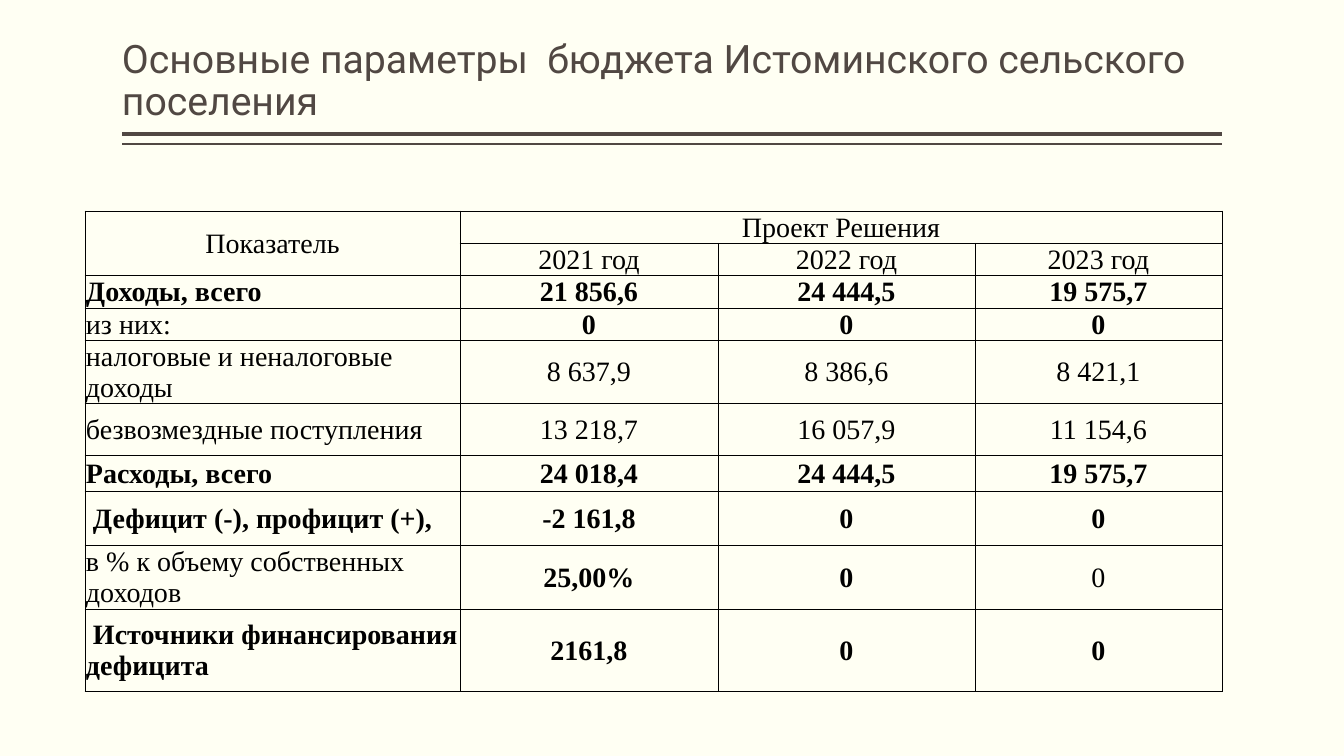
"""Build the budget parameters slide."""
from dataclasses import dataclass

from lxml import etree
from pptx import Presentation
from pptx import util as u
from pptx.dml.color import RGBColor
from pptx.enum import shapes, text
from pptx.oxml import ns


@dataclass(frozen=True)
class Theme:
    background: str = "FFFFF3"
    heading: str = "514843"
    ink: str = "000000"
    title_font: str = "Roboto"
    table_font: str = "Times New Roman"
    title_size: int = 28
    table_size: int = 20
    border_width: float = 0.5


@dataclass(frozen=True)
class Rule:
    top: int
    weight: int


@dataclass(frozen=True)
class BudgetRow:
    height: int
    label: str
    values: tuple[str, str, str]
    bold: tuple[bool, bool, bool, bool]


THEME = Theme()
LEFT, RIGHT = 122, 1222
TABLE_LEFT, TABLE_TOP = 85, 211
COLUMN_WIDTHS = (375, 258, 257, 247)
PLAIN, BOLD = (False,) * 4, (True,) * 4

RULES = (Rule(134, 3), Rule(144, 1))

ROWS = (
    BudgetRow(32, "Показатель", ("Проект Решения", "", ""), PLAIN),
    BudgetRow(32, "", ("2021 год", "2022 год", "2023 год"), PLAIN),
    BudgetRow(33, "Доходы, всего", ("21 856,6", "24 444,5", "19 575,7"), BOLD),
    BudgetRow(32, "из них:", ("0", "0", "0"), (False, True, True, True)),
    BudgetRow(63, "налоговые и неналоговые доходы", ("8 637,9", "8 386,6", "8 421,1"), PLAIN),
    BudgetRow(52, "безвозмездные поступления", ("13 218,7", "16 057,9", "11 154,6"), PLAIN),
    BudgetRow(36, "Расходы, всего", ("24 018,4", "24 444,5", "19 575,7"), BOLD),
    BudgetRow(54, " Дефицит (-), профицит (+),", ("-2 161,8", "0", "0"), BOLD),
    BudgetRow(64, "в % к объему собственных доходов", ("25,00%", "0", "0"), (False, True, True, False)),
    BudgetRow(82, " Источники финансирования дефицита", ("2161,8", "0", "0"), BOLD),
)


def px(length: int) -> u.Emu:
    """Turn pixels into EMU."""
    return u.Emu(round(length * 914400 / 100.8))


def format_font(font, name: str, size: int, color: str, bold: bool = False) -> None:
    """Apply typeface, size, colour and weight."""
    font.name = name
    font.size = u.Pt(size)
    font.bold = bold
    font.color.rgb = RGBColor.from_string(color)


def draw_title(slide, title: str) -> None:
    """Fill and place the title placeholder."""
    shape = slide.shapes.title
    shape.left, shape.top = px(LEFT), px(8)
    shape.width, shape.height = px(RIGHT - LEFT), px(121)
    frame = shape.text_frame
    frame.text = title
    frame.word_wrap = True
    frame.auto_size = text.MSO_AUTO_SIZE.NONE
    frame.vertical_anchor = text.MSO_ANCHOR.BOTTOM
    frame.margin_left = frame.margin_right = 0
    frame.margin_top = frame.margin_bottom = px(5)
    paragraph = frame.paragraphs[0]
    paragraph.alignment = text.PP_ALIGN.LEFT
    paragraph.line_spacing = 0.9
    format_font(paragraph.runs[0].font, THEME.title_font, THEME.title_size, THEME.heading)


def draw_rule(slide, rule: Rule) -> None:
    """Draw one line under the title."""
    connector = slide.shapes.add_connector(
        shapes.MSO_CONNECTOR.STRAIGHT, px(RIGHT), px(rule.top), px(LEFT), px(rule.top)
    )
    connector.line.color.rgb = RGBColor.from_string(THEME.heading)
    connector.line.width = u.Pt(rule.weight)
    etree.SubElement(connector._element.spPr, ns.qn("a:effectLst"))


def draw_borders(cell) -> None:
    """Outline all four sides of a cell."""
    properties = cell._tc.get_or_add_tcPr()
    for side in ("lnL", "lnR", "lnT", "lnB"):
        line = etree.SubElement(
            properties, ns.qn(f"a:{side}"), w=str(u.Pt(THEME.border_width))
        )
        fill = etree.SubElement(line, ns.qn("a:solidFill"))
        etree.SubElement(fill, ns.qn("a:srgbClr"), val=THEME.ink)


def draw_cell(cell, content: str, bold: bool, centered: bool) -> None:
    """Fill and format one table cell."""
    draw_borders(cell)
    cell.fill.background()
    cell.vertical_anchor = text.MSO_ANCHOR.MIDDLE
    cell.margin_left = cell.margin_right = cell.margin_top = px(1)
    cell.margin_bottom = 0
    cell.text_frame.text = content
    paragraph = cell.text_frame.paragraphs[0]
    paragraph.alignment = text.PP_ALIGN.CENTER if centered else text.PP_ALIGN.LEFT
    format_font(paragraph.font, THEME.table_font, THEME.table_size, THEME.ink, bold)
    for run in paragraph.runs:
        format_font(run.font, THEME.table_font, THEME.table_size, THEME.ink, bold)


def draw_table(slide) -> None:
    """Draw the budget table with its two-level header."""
    table = slide.shapes.add_table(
        len(ROWS), len(COLUMN_WIDTHS), px(TABLE_LEFT), px(TABLE_TOP),
        px(sum(COLUMN_WIDTHS)), px(sum(row.height for row in ROWS)),
    ).table
    table.first_row = table.horz_banding = False
    for column, width in zip(table.columns, COLUMN_WIDTHS):
        column.width = px(width)
    for row_index, row in enumerate(ROWS):
        table.rows[row_index].height = px(row.height)
        for column_index, content in enumerate((row.label, *row.values)):
            draw_cell(
                table.cell(row_index, column_index), content, row.bold[column_index],
                centered=row_index < 2 or column_index > 0,
            )
    table.cell(0, 0).merge(table.cell(1, 0))
    table.cell(0, 1).merge(table.cell(0, 3))


def main() -> None:
    """Assemble and save the presentation."""
    presentation = Presentation()
    presentation.slide_width, presentation.slide_height = px(1344), px(756)
    slide = presentation.slides.add_slide(presentation.slide_layouts.get_by_name("Title Only"))
    slide.background.fill.solid()
    slide.background.fill.fore_color.rgb = RGBColor.from_string(THEME.background)
    for rule in RULES:
        draw_rule(slide, rule)
    draw_title(slide, "Основные параметры  бюджета Истоминского сельского  поселения")
    draw_table(slide)
    presentation.save("out.pptx")


if __name__ == "__main__":
    main()
